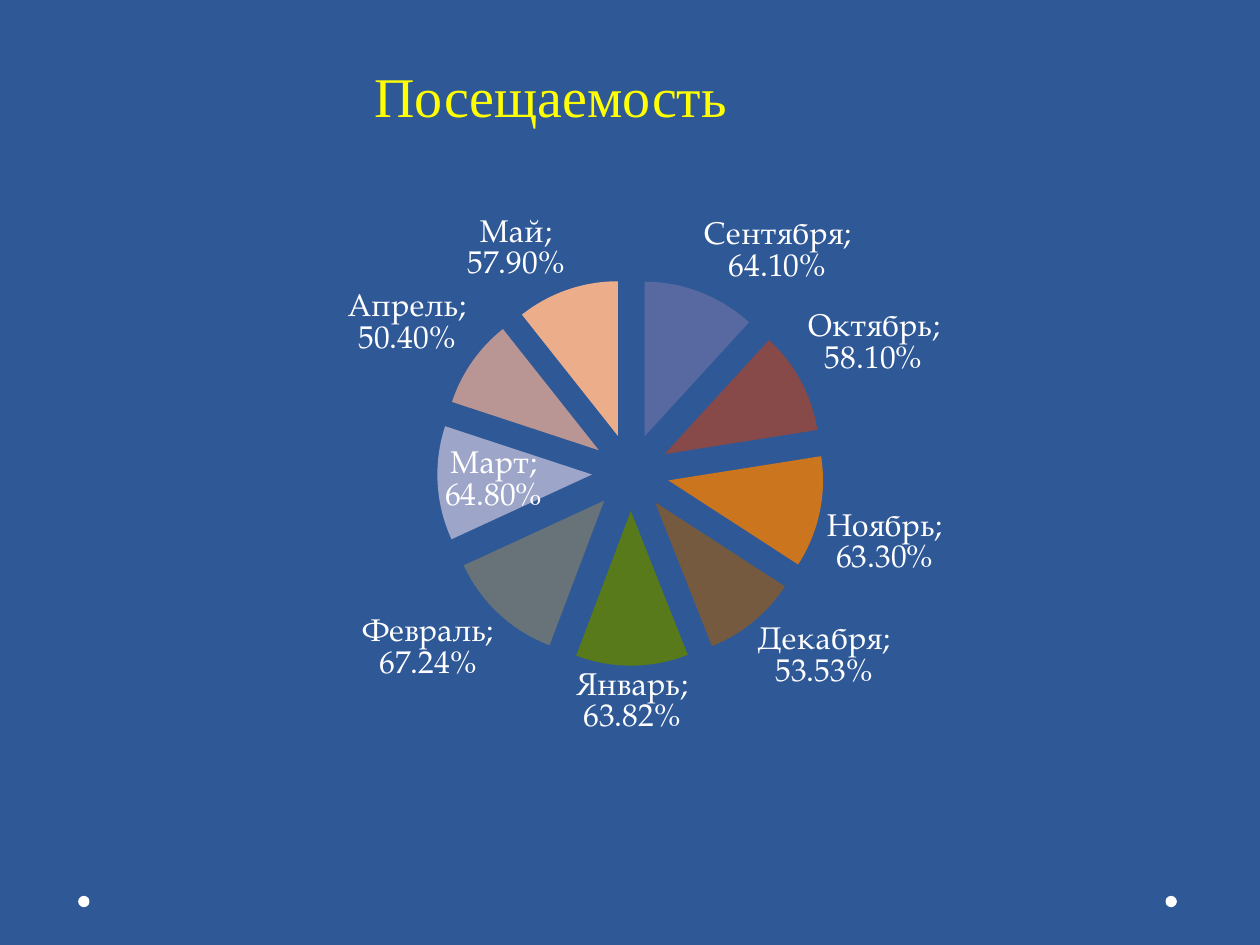
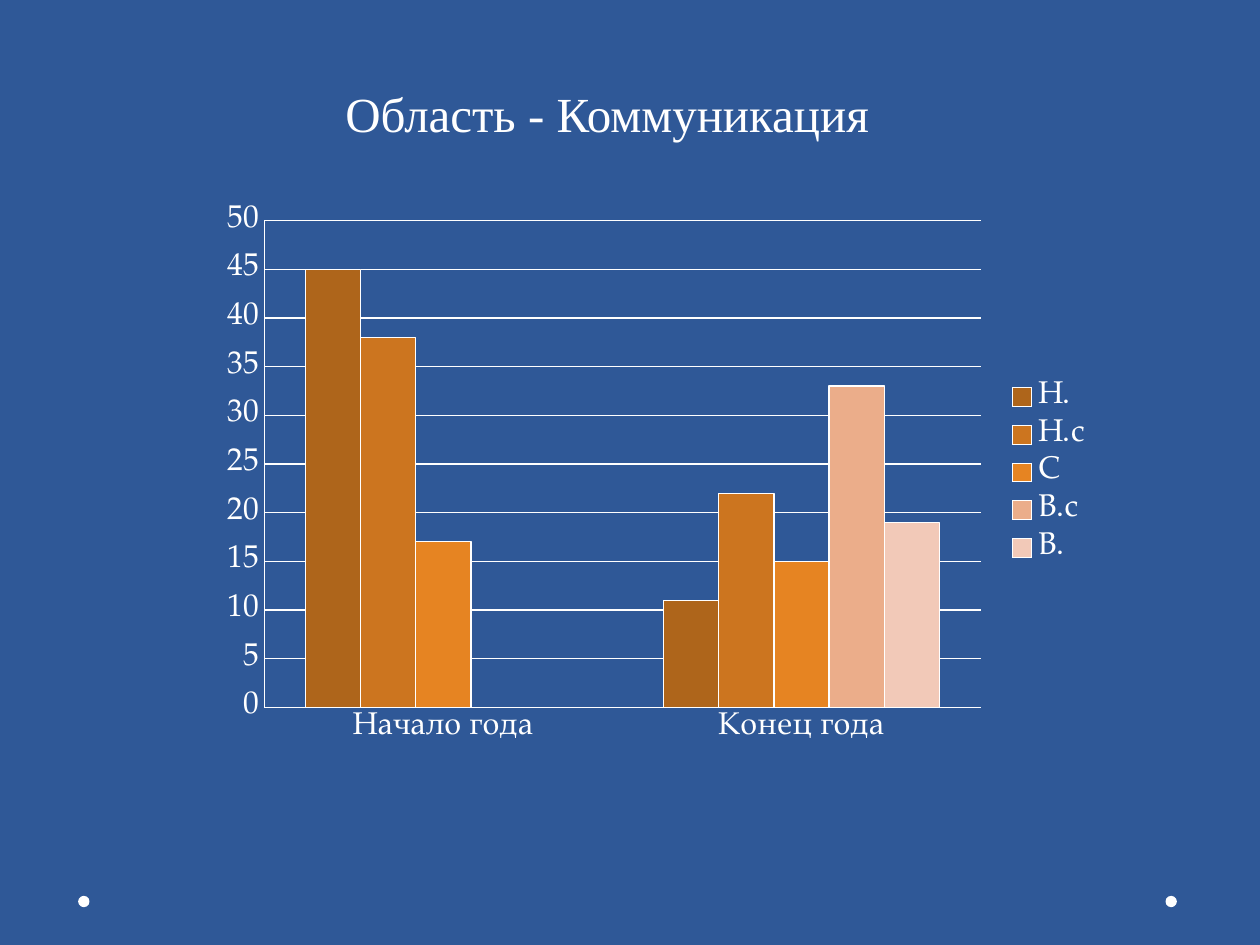
from lxml import etree
from pptx import Presentation
from pptx.chart.data import CategoryChartData
from pptx.dml.color import RGBColor
from pptx.enum.chart import XL_CHART_TYPE, XL_LABEL_POSITION, XL_LEGEND_POSITION, XL_TICK_MARK
from pptx.enum.shapes import MSO_SHAPE
from pptx.enum.text import MSO_ANCHOR, PP_ALIGN
from pptx.oxml.ns import qn
from pptx.util import Inches, Pt

PIE, COLUMNS = XL_CHART_TYPE.PIE, XL_CHART_TYPE.COLUMN_CLUSTERED
OUTSIDE, INSIDE = XL_LABEL_POSITION.OUTSIDE_END, XL_LABEL_POSITION.INSIDE_END
NO_TICKS = XL_TICK_MARK.NONE

BLUE = RGBColor(0x2F, 0x58, 0x97)
WHITE = RGBColor(0xFF, 0xFF, 0xFF)
YELLOW = RGBColor(0xFF, 0xFF, 0x00)
TITLE_FONT = "Times New Roman"
CHART_FONT = "TeX Gyre Pagella"

ATTENDANCE = [
    ("Сентября", 0.641, RGBColor(0x57, 0x69, 0xA0)),
    ("Октябрь", 0.581, RGBColor(0x88, 0x4A, 0x48)),
    ("Ноябрь", 0.633, RGBColor(0xCC, 0x75, 0x1F)),
    ("Декабря", 0.5353, RGBColor(0x75, 0x5A, 0x3F)),
    ("Январь", 0.6382, RGBColor(0x58, 0x7A, 0x1B)),
    ("Февраль", 0.6724, RGBColor(0x68, 0x72, 0x79)),
    ("Март", 0.648, RGBColor(0x9D, 0xA5, 0xC9)),
    ("Апрель", 0.504, RGBColor(0xB9, 0x95, 0x93)),
    ("Май", 0.579, RGBColor(0xEB, 0xAD, 0x8A)),
]
LEVELS = [
    ("Н.", (45, 11), RGBColor(0xAE, 0x65, 0x1B)),
    ("Н.с", (38, 22), RGBColor(0xCC, 0x75, 0x1F)),
    ("С", (17, 15), RGBColor(0xE6, 0x84, 0x22)),
    ("В.с", (0, 33), RGBColor(0xEB, 0xAD, 0x8A)),
    ("В.", (0, 19), RGBColor(0xF2, 0xC9, 0xB8)),
]


def add_page(title, left, top, width, height, size, color):
    """Add a slide with its title and the two corner dots."""
    page = deck.slides.add_slide(deck.slide_layouts[5])
    for dot_left in (0.62, 9.25):
        dot = page.shapes.add_shape(MSO_SHAPE.OVAL, Inches(dot_left), Inches(7.11),
                                    Inches(0.09), Inches(0.09))
        dot.shadow.inherit = False
        dot.fill.solid()
        dot.fill.fore_color.rgb = WHITE
        dot.line.fill.background()
    box = page.shapes.title
    box.left, box.top = Inches(left), Inches(top)
    box.width, box.height = Inches(width), Inches(height)
    frame = box.text_frame
    frame.text = title
    frame.word_wrap = False
    frame.vertical_anchor = MSO_ANCHOR.TOP
    frame.paragraphs[0].alignment = PP_ALIGN.LEFT
    font = frame.paragraphs[0].runs[0].font
    font.name, font.size, font.color.rgb = TITLE_FONT, Pt(size), color
    return page


def add_chart(page, kind, data, width, plot_box):
    """Add a chart; plot_box is x, y, w, h of the plot as shares of the chart."""
    chart = page.shapes.add_chart(kind, Inches(1.67), Inches(1.53),
                                  Inches(width), Inches(4.44), data).chart
    chart.has_title = False
    chart.font.name, chart.font.size = CHART_FONT, Pt(18)
    chart.font.color.rgb = WHITE
    plot_area = chart._chartSpace.chart.plotArea
    for old in plot_area.findall(qn("c:layout")):
        plot_area.remove(old)
    layout = etree.Element(qn("c:layout"))
    plot_area.insert(0, layout)
    manual = etree.SubElement(layout, qn("c:manualLayout"))
    settings = [("layoutTarget", "inner"), ("xMode", "edge"), ("yMode", "edge")]
    for tag, value in settings + list(zip("xywh", plot_box)):
        etree.SubElement(manual, qn("c:" + tag)).set("val", str(value))
    return chart


deck = Presentation()
deck.slide_width, deck.slide_height = Inches(10), Inches(7.5)
background = deck.slide_master.background.fill
background.solid()
background.fore_color.rgb = BLUE

# Attendance by month
page = add_page("Посещаемость", 2.87, 0.44, 3.03, 0.64, 32, YELLOW)
data = CategoryChartData(number_format="0.00%")
data.categories = [month for month, share, color in ATTENDANCE]
data.add_series("Series 1", [share for month, share, color in ATTENDANCE])
chart = add_chart(page, PIE, data, 6.67, (0.27, 0.15, 0.46, 0.7))
chart.has_legend = False
plot = chart.plots[0]
plot.vary_by_categories = True
months = plot.series[0]
explosion = etree.Element(qn("c:explosion"))
explosion.set("val", "25")
months._element.find(qn("c:tx")).addnext(explosion)
for index, (month, share, color) in enumerate(ATTENDANCE):
    fill = months.points[index].format.fill
    fill.solid()
    fill.fore_color.rgb = color
labels = months.data_labels
labels.show_value = labels.show_category_name = True
labels.show_percentage = labels.show_legend_key = False
labels.number_format, labels.number_format_is_linked = "0.00%", False
labels.position = OUTSIDE
march = data.categories[6].idx
months.points[march].data_label.position = INSIDE
for flag in months._element.iter(qn("c:showCatName")):
    flag.set("val", "1")

# Communication levels
page = add_page("Область - Коммуникация", 2.64, 0.61, 4.65, 0.57, 28, WHITE)
data = CategoryChartData()
data.categories = ["Начало года", "Конец года"]
for level, values, color in LEVELS:
    data.add_series(level, values)
chart = add_chart(page, COLUMNS, data, 7.11, (0.06, 0.05, 0.8, 0.87))
plot = chart.plots[0]
plot.vary_by_categories = False
plot.gap_width, plot.overlap = 150, 0
for series, (level, values, color) in zip(plot.series, LEVELS):
    series.format.fill.solid()
    series.format.fill.fore_color.rgb = color
    series.format.line.color.rgb = WHITE
    series.format.line.width = Pt(0.75)
for axis in (chart.category_axis, chart.value_axis):
    axis.major_tick_mark = axis.minor_tick_mark = NO_TICKS
    axis.format.line.color.rgb = WHITE
scale = chart.value_axis
scale.minimum_scale, scale.maximum_scale, scale.major_unit = 0, 50, 5
scale.has_major_gridlines = True
scale.major_gridlines.format.line.color.rgb = WHITE
scale.major_gridlines.format.line.width = Pt(0.75)
chart.has_legend = True
chart.legend.position = XL_LEGEND_POSITION.RIGHT
chart.legend.include_in_layout = False

deck.save("out.pptx")
